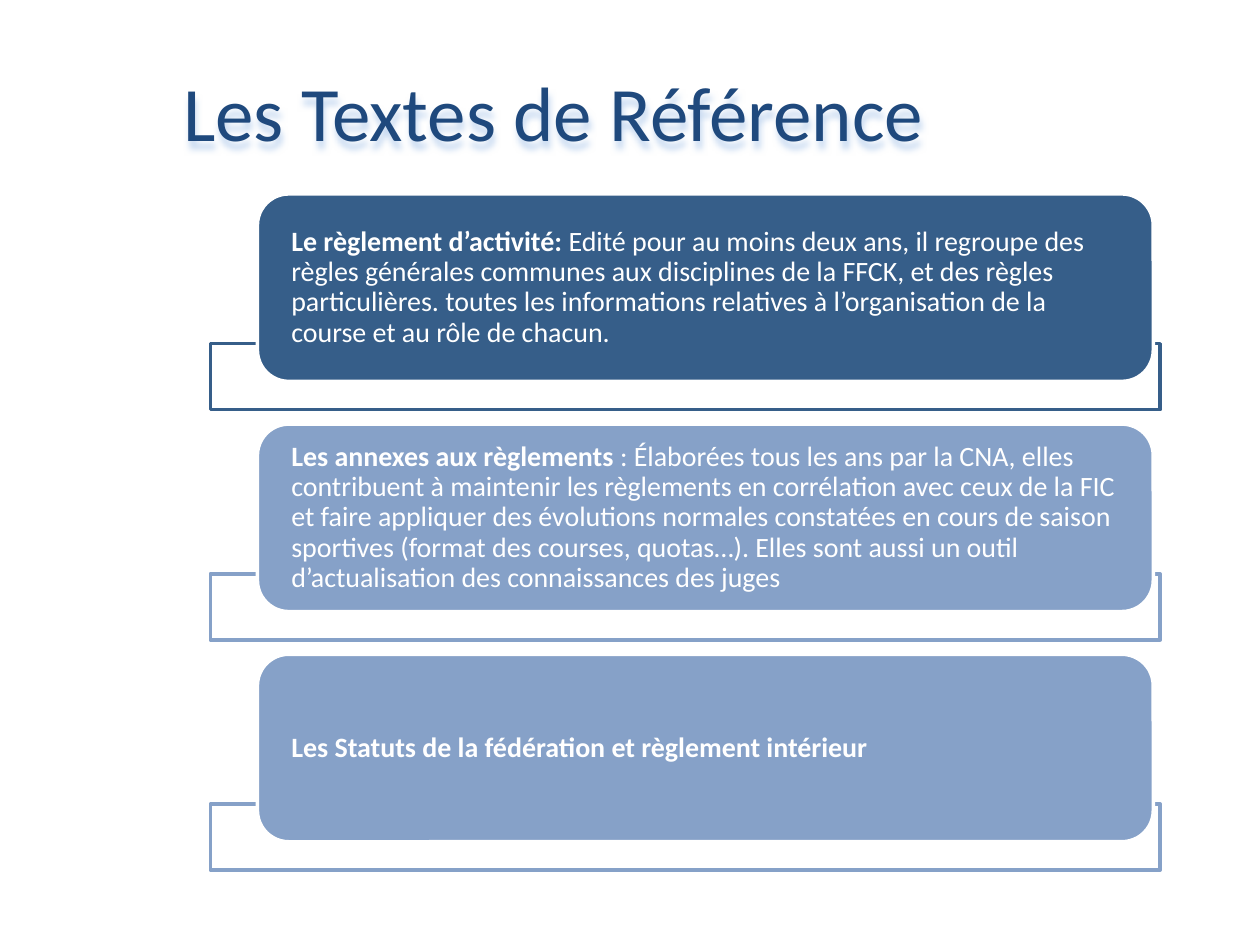
"""Build the slide listing the reference texts of the federation."""
from dataclasses import dataclass

from lxml import etree
from pptx import Presentation
from pptx.dml.color import RGBColor
from pptx.enum.shapes import MSO_SHAPE
from pptx.enum.text import MSO_ANCHOR, PP_ALIGN
from pptx.oxml.ns import qn
from pptx.util import Cm, Pt

RECTANGLE = MSO_SHAPE.RECTANGLE
ROUNDED = MSO_SHAPE.ROUNDED_RECTANGLE
TOP, MIDDLE = MSO_ANCHOR.TOP, MSO_ANCHOR.MIDDLE
CENTER, LEFT = PP_ALIGN.CENTER, PP_ALIGN.LEFT
FONT = "Calibri"
WHITE, TITLE_BLUE, SHADOW_BLUE = "FFFFFF", "1F497D", "C6D9F1"
DARK_BLUE, LIGHT_BLUE = "365E89", "86A1C8"
FIRST_TOP, PITCH, FRAME_OFFSET = 3.91, 4.64, 3.02


@dataclass
class Reference:
    heading: str
    description: str
    color: str


REFERENCES = [
    Reference(
        "Le règlement d’activité: ",
        "Edité pour au moins deux ans, il regroupe des règles générales communes "
        "aux disciplines de la FFCK, et des règles particulières. toutes les "
        "informations relatives à l’organisation de la course et au rôle de chacun.",
        DARK_BLUE,
    ),
    Reference(
        "Les annexes aux règlements ",
        ": Élaborées tous les ans par la CNA, elles contribuent à maintenir les "
        "règlements en corrélation avec ceux de la FIC et faire appliquer des "
        "évolutions normales constatées en cours de saison sportives (format des "
        "courses, quotas…). Elles sont aussi un outil d’actualisation des "
        "connaissances des juges",
        LIGHT_BLUE,
    ),
    Reference("Les Statuts de la fédération et règlement intérieur", "", LIGHT_BLUE),
]


def rgb(color: str) -> RGBColor:
    return RGBColor.from_string(color)


def set_font(font, size: float, color: str, bold: bool = False) -> None:
    font.name, font.size, font.bold = FONT, Pt(size), bold
    font.color.rgb = rgb(color)


def add_box(slide, kind, left: float, top: float, width: float, height: float,
            fill: str, line: str):
    shape = slide.shapes.add_shape(kind, Cm(left), Cm(top), Cm(width), Cm(height))
    shape.shadow.inherit = False
    shape.fill.solid()
    shape.fill.fore_color.rgb = rgb(fill)
    shape.line.color.rgb = rgb(line)
    shape.line.width = Pt(2)
    return shape


def add_title(slide, text: str) -> None:
    title = slide.shapes.title
    title.left, title.top, title.width, title.height = Cm(3.35), Cm(1.17), Cm(15.62), Cm(3.12)
    title.text_frame.text = text
    title.text_frame.vertical_anchor = TOP
    paragraph = title.text_frame.paragraphs[0]
    paragraph.alignment = CENTER
    set_font(paragraph.runs[0].font, 44, TITLE_BLUE)
    effects = etree.SubElement(title._element.spPr, qn("a:effectLst"))
    shadow = etree.SubElement(effects, qn("a:outerShdw"), blurRad="50800",
                              dist="50800", dir="5400000", algn="t", rotWithShape="0")
    etree.SubElement(shadow, qn("a:srgbClr"), val=SHADOW_BLUE)


def add_reference(slide, reference: Reference, top: float) -> None:
    frame = add_box(slide, RECTANGLE, 4.24, top + FRAME_OFFSET, 19.15, 1.33,
                    WHITE, reference.color)
    frame_color = frame._element.spPr.find(qn("a:solidFill"))[0]
    etree.SubElement(frame_color, qn("a:alpha"), val="90000")

    card = add_box(slide, ROUNDED, 5.19, top, 18.06, 3.78, reference.color, WHITE)
    card.adjustments[0] = 0.167
    text_frame = card.text_frame
    text_frame.word_wrap = True
    text_frame.vertical_anchor = MIDDLE
    text_frame.margin_left = text_frame.margin_right = Cm(0.5)
    text_frame.margin_top = text_frame.margin_bottom = 0
    paragraph = text_frame.paragraphs[0]
    paragraph.alignment = LEFT
    paragraph.line_spacing = 0.9
    for text, bold in ((reference.heading, True), (reference.description, False)):
        if text:
            run = paragraph.add_run()
            run.text = text
            set_font(run.font, 16, WHITE, bold)


def main() -> None:
    presentation = Presentation()
    presentation.slide_width, presentation.slide_height = Cm(25.4), Cm(19.05)
    slide = presentation.slides.add_slide(presentation.slide_layouts[5])
    add_title(slide, "Les Textes de Référence")
    for index, reference in enumerate(REFERENCES):
        add_reference(slide, reference, FIRST_TOP + index * PITCH)
    presentation.save("out.pptx")


if __name__ == "__main__":
    main()
